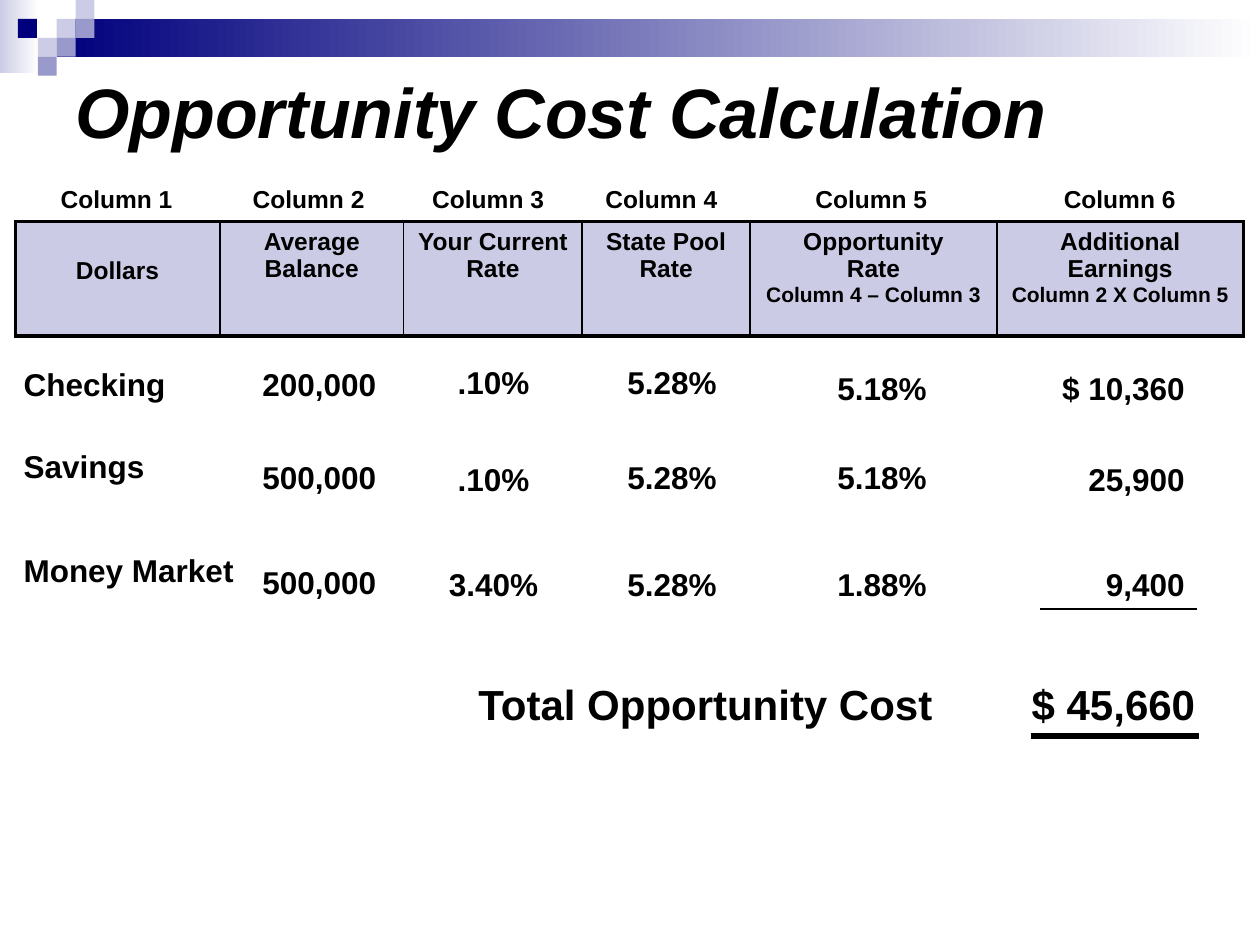
from dataclasses import dataclass
from typing import NamedTuple

from lxml.etree import SubElement
from pptx import Presentation
from pptx.dml.color import RGBColor
from pptx.enum.shapes import MSO_CONNECTOR as Link, MSO_SHAPE as Shape
from pptx.enum.text import MSO_ANCHOR as Anchor, PP_ALIGN as Align
from pptx.oxml.ns import qn
from pptx.util import Inches, Pt

COLS, ROWS = 120, 90
NAVY, LILAC, PALE = "00007D", "9999CC", "CCCCE6"
WHITE, BLACK = "FFFFFF", "000000"
TILE = 1.8
PLAIN = "{2D5ABB26-0587-4C30-8999-92F81FD0307C}"

deck = Presentation()
deck.slide_width, deck.slide_height = Inches(10), Inches(7.5)
slide = deck.slides.add_slide(deck.slide_layouts[6])
shapes = slide.shapes


class Box(NamedTuple):
    left: float
    top: float
    width: float
    height: float


class Run(NamedTuple):
    text: str
    size: float = 14
    breaks: int = 0


@dataclass
class Field:
    left: float
    align: Align
    values: tuple[str, ...]
    tops: tuple[float, ...]


@dataclass
class Grid:
    left: float
    top: float
    cols: tuple[float, ...]
    rows: tuple[float, ...]


def horiz(cols: float) -> int:
    return round(deck.slide_width * cols / COLS)


def vert(rows: float) -> int:
    return round(deck.slide_height * rows / ROWS)


def place(box: Box) -> tuple[int, ...]:
    return horiz(box.left), vert(box.top), horiz(box.width), vert(box.height)


def color(code: str) -> RGBColor:
    return RGBColor.from_string(code)


def block(box: Box, start: str, end: str = "") -> None:
    rect = shapes.add_shape(Shape.RECTANGLE, *place(box))
    rect.shadow.inherit = False
    rect.line.fill.background()
    if not end:
        rect.fill.solid()
        rect.fill.fore_color.rgb = color(start)
        return
    rect.fill.gradient()
    rect.fill.gradient_angle = 0
    for stop, code in zip(rect.fill.gradient_stops, (start, end)):
        stop.color.rgb = color(code)


def write(para, runs: tuple[Run, ...], align: Align, slant: bool = False) -> None:
    para.alignment = align
    for item in runs:
        for _ in range(item.breaks):
            para.add_line_break()
            SubElement(para._p[-1], qn("a:rPr"), sz=str(item.size * 100))
        run = para.add_run()
        run.text = item.text
        font = run.font
        font.name, font.size = "Arial", Pt(item.size)
        font.bold, font.italic = True, slant
        font.color.rgb = color(BLACK)


def label(box: Box, text: str, size: float, align: Align, slant: bool = False) -> None:
    frame = shapes.add_textbox(*place(box)).text_frame
    frame.word_wrap = True
    frame.vertical_anchor = Anchor.MIDDLE if slant else Anchor.TOP
    write(frame.paragraphs[0], (Run(text, size),), align, slant)


def rule(left: float, right: float, top: float, weight: float) -> None:
    line = shapes.add_connector(
        Link.STRAIGHT, horiz(left), vert(top), horiz(right), vert(top))
    line.line.width = Pt(weight)
    line.line.color.rgb = color(BLACK)
    SubElement(line._element.spPr, qn("a:effectLst"))


def table(grid: Grid):
    box = Box(grid.left, grid.top, sum(grid.cols), sum(grid.rows))
    made = shapes.add_table(len(grid.rows), len(grid.cols), *place(box)).table
    made.first_row = made.horz_banding = False
    made._tbl.tblPr.find(qn("a:tableStyleId")).text = PLAIN
    for col, width in zip(made.columns, grid.cols):
        col.width = horiz(width)
    for row, height in zip(made.rows, grid.rows):
        row.height = vert(height)
    for cell in made.iter_cells():
        cell.fill.background()
    return made


def border(cell, side: str, weight: float) -> None:
    props = cell._tc.get_or_add_tcPr()
    line = SubElement(props, qn(f"a:ln{side}"), w=str(Pt(weight)))
    fill = SubElement(line, qn("a:solidFill"))
    SubElement(fill, qn("a:srgbClr"), val=BLACK)


def shade(cell) -> None:
    props = cell._tc.get_or_add_tcPr()
    cell.fill.solid()
    cell.fill.fore_color.rgb = color(LILAC)
    fill = props.find(qn("a:solidFill"))
    SubElement(fill.find(qn("a:srgbClr")), qn("a:alpha"), val="50000")
    props.append(fill)


def banner() -> None:
    block(Box(0, 0, 3.7, 7), PALE, WHITE)
    block(Box(5.4, TILE, 114.6, 2 * TILE), NAVY, WHITE)
    tiles = ((3, 1, PALE), (4, 0, PALE), (4, 1, LILAC), (2, 2, PALE),
             (0.95, 1, NAVY), (3, 2, LILAC), (2, 3, LILAC))
    for col, row, code in tiles:
        block(Box(col * TILE, row * TILE, TILE, TILE), code)


def header() -> None:
    heads = (
        (Run("Dollars", breaks=1),),
        (Run("Average Balance"),),
        (Run("Your Current Rate"),),
        (Run("State Pool Rate"),),
        (Run("Opportunity"), Run("Rate", breaks=1), Run("Column 4 – Column 3", 12, 1)),
        (Run("Additional Earnings"), Run("Column 2 X Column 5", 12, 1)),
    )
    made = table(Grid(1.45, 21.1, (19.5, 17.5, 17, 16, 23.5, 23.5), (10.9,)))
    last = len(heads) - 1
    for spot, runs in enumerate(heads):
        cell = made.cell(0, spot)
        write(cell.text_frame.paragraphs[0], runs, Align.CENTER)
        border(cell, "L", 1 if spot else 2.25)
        border(cell, "R", 2.25 if spot == last else 1)
        border(cell, "T", 2.25)
        border(cell, "B", 2.25)
        shade(cell)


def names() -> None:
    made = table(Grid(1.4, 17.1, (19.4, 17.2, 17, 16, 24, 23.3), (3.9,)))
    for spot, cell in enumerate(made.iter_cells(), 1):
        write(cell.text_frame.paragraphs[0], (Run(f"Column {spot}"),), Align.CENTER)


def accounts() -> None:
    made = table(Grid(1.05, 34.4, (22.7,), (12.6,) + (4.7,) * 7))
    first, third = made.cell(0, 0).text_frame, made.cell(2, 0).text_frame
    made.rows[1].height = vert(4.7)
    write(first.paragraphs[0], (Run("Checking", 18),), Align.LEFT)
    saving = first.add_paragraph()
    saving.space_before = Pt(27)
    write(saving, (Run("Savings", 18),), Align.LEFT)
    made.rows[0].height = vert(12.6)
    write(third.paragraphs[0], (Run("Money Market", 18),), Align.LEFT)


def figures() -> None:
    fields = (
        Field(21, Align.RIGHT, ("200,000", "500,000", "500,000"), (34.2, 43, 53)),
        Field(39, Align.CENTER, (".10%", ".10%", "3.40%"), (34, 43.2, 53.2)),
        Field(56, Align.CENTER, ("5.28%",) * 3, (34, 43, 53.2)),
        Field(76, Align.CENTER, ("5.18%", "5.18%", "1.88%"), (34.6, 43, 53.2)),
        Field(98, Align.RIGHT, ("$ 10,360", "25,900", "9,400"), (34.6, 43.2, 53.2)),
    )
    for field in fields:
        for text, top in zip(field.values, field.tops):
            label(Box(field.left, top, 16, 4.8), text, 18, field.align)


banner()
label(Box(6, 6, 108, 9), "Opportunity Cost Calculation", 40, Align.LEFT, True)
header()
names()
accounts()
figures()
rule(99, 114, 58, 1)
label(Box(43, 64, 47, 6), "Total Opportunity Cost", 24, Align.RIGHT)
label(Box(94, 64, 21, 6), "$ 45,660", 24, Align.RIGHT)
rule(98.2, 114.2, 70.1, 3)
deck.save("out.pptx")
